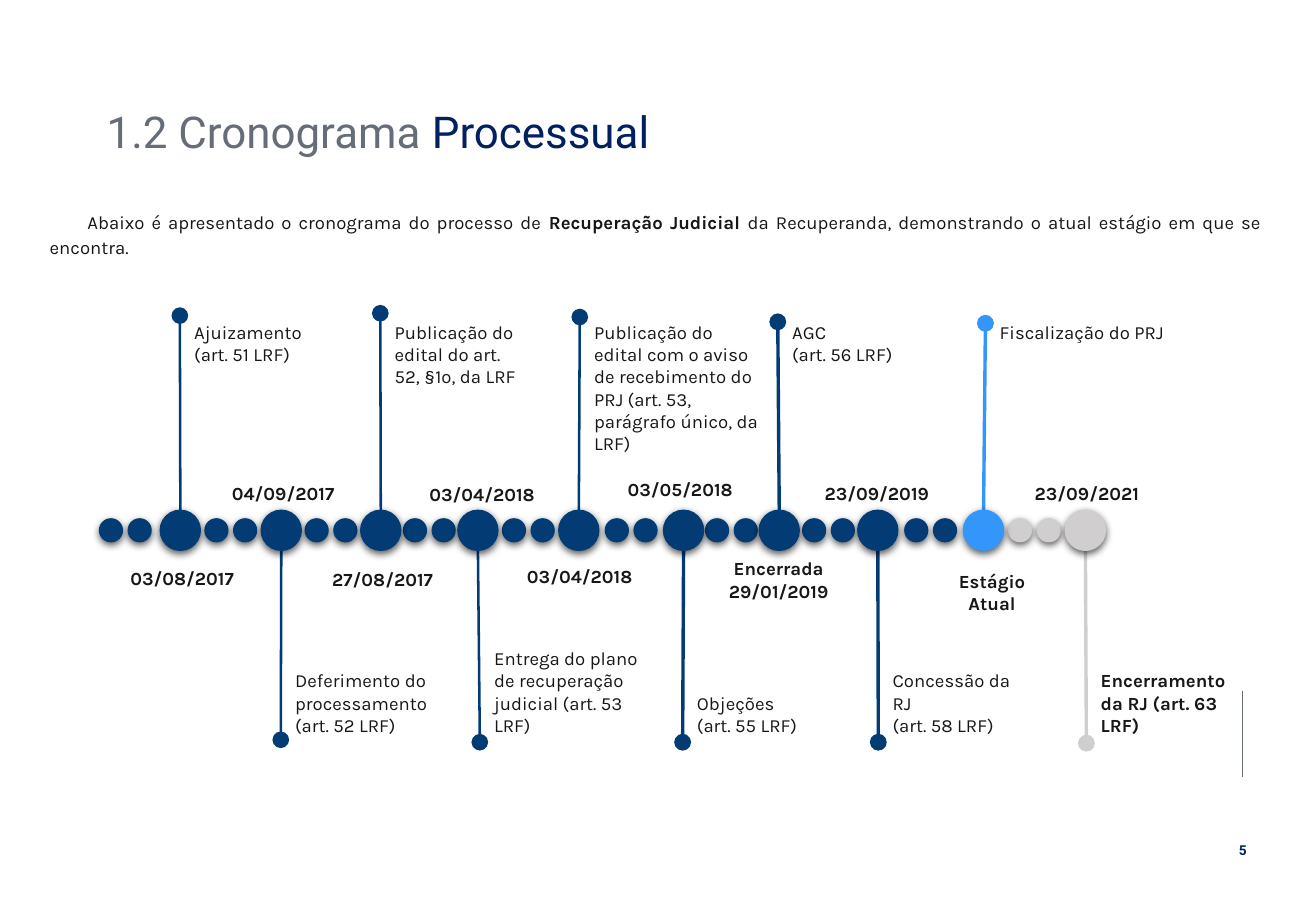
from dataclasses import dataclass

from lxml import etree
from pptx import Presentation
from pptx.dml.color import RGBColor
from pptx.enum.shapes import MSO_CONNECTOR, MSO_SHAPE
from pptx.enum.text import MSO_ANCHOR, MSO_AUTO_SIZE, PP_ALIGN
from pptx.oxml.ns import qn
from pptx.util import Cm, Pt

STRAIGHT = MSO_CONNECTOR.STRAIGHT
OVAL = MSO_SHAPE.OVAL
TOP, BOTTOM = MSO_ANCHOR.TOP, MSO_ANCHOR.BOTTOM
FIT_SHAPE = MSO_AUTO_SIZE.SHAPE_TO_FIT_TEXT
LEFT, CENTER, JUSTIFY = PP_ALIGN.LEFT, PP_ALIGN.CENTER, PP_ALIGN.JUSTIFY

NAVY, GRAY, INK = "002060", "656D78", "181717"
DONE, CURRENT, FUTURE = "033C75", "3296FA", "D0CECE"

AXIS_Y = 4.59
CAPTION_TOP, CAPTION_BOTTOM, CAPTION_HEIGHT = 0.08, 9.02, 1.2
DATE_WIDTH, DATE_HEIGHT = 2.9, 0.74
MILESTONE_SIZE, STEP_SIZE = 0.84, 0.48
STEM_START = 0.35
STEP_OFFSET = 0.3
LEADING_STEPS_X = 0.62


@dataclass
class Milestone:
    """Positions are in cm from the corner of the timeline."""
    x: float
    tip_x: float
    tip_y: float
    stem_width: float
    date: str
    date_x: float
    date_top: float
    caption: str
    caption_width: float
    color: str = DONE


MILESTONES = [
    Milestone(1.77, 1.76, 0.1, 1.5, "03/08/2017", 1.81, 5.23,
              "Ajuizamento (art. 51 LRF)", 2.82),
    Milestone(3.88, 3.87, 8.97, 1.5, "04/09/2017", 3.92, 3.46,
              "Deferimento do processamento (art. 52 LRF)", 3.48),
    Milestone(5.96, 5.95, 0.05, 1.5, "27/08/2017", 6, 5.26,
              "Publicação do edital do art. 52, §1º, da LRF", 3.3),
    Milestone(7.99, 8.03, 9.02, 1.5, "03/04/2018", 8.08, 3.48,
              "Entrega do plano de recuperação judicial (art. 53 LRF)", 3.56),
    Milestone(10.1, 10.12, 0.13, 1.5, "03/04/2018", 10.12, 5.18,
              "Publicação do edital com o aviso de recebimento do PRJ "
              "(art. 53, parágrafo único, da LRF)", 3.96),
    Milestone(12.29, 12.27, 9.02, 2, "03/05/2018", 12.22, 3.36,
              "Objeções\n(art. 55 LRF)", 2.8),
    Milestone(14.29, 14.26, 0.23, 2, "Encerrada\n29/01/2019", 14.28, 5.03,
              "AGC\n(art. 56 LRF)", 2.8),
    Milestone(16.35, 16.36, 9.02, 2, "23/09/2019", 16.33, 3.46,
              "Concessão da RJ\n(art. 58 LRF)", 3.38),
    Milestone(18.56, 18.6, 0.26, 2, "Estágio Atual", 18.74, 5.29,
              "Fiscalização do PRJ", 4.01, CURRENT),
    Milestone(20.69, 20.71, 9.04, 2, "23/09/2021", 20.72, 3.46,
              "Encerramento da RJ (art. 63 LRF)", 3.48, FUTURE),
]


def rgb(color):
    return RGBColor.from_string(color)


def format_run(run, size, font, color, bold=False):
    run.font.size = Pt(size)
    run.font.name = font
    run.font.bold = bold
    run.font.color.rgb = rgb(color)


def add_text_box(slide, left, top, width, height, anchor=TOP):
    box = slide.shapes.add_textbox(Cm(left), Cm(top), Cm(width), Cm(height))
    box.text_frame.word_wrap = True
    box.text_frame.vertical_anchor = anchor
    return box.text_frame


def add_label(slide, left, top, width, height, text, size=11, font="Karla",
              color=INK, bold=False, align=LEFT, anchor=TOP):
    frame = add_text_box(slide, left, top, width, height, anchor)
    frame.auto_size = FIT_SHAPE
    frame.text = text
    for paragraph in frame.paragraphs:
        paragraph.alignment = align
        for run in paragraph.runs:
            format_run(run, size, font, color, bold)


def add_line(slide, x1, y1, x2, y2, color, width):
    line = slide.shapes.add_connector(STRAIGHT, Cm(x1), Cm(y1), Cm(x2), Cm(y2))
    line.line.color.rgb = rgb(color)
    line.line.width = Pt(width)
    etree.SubElement(line._element.spPr, qn("a:effectLst"))
    return line


def add_dot(slide, x, y, size, color):
    """Draw a dot with a soft shadow, centred on x, y."""
    dot = slide.shapes.add_shape(OVAL, Cm(x - size / 2), Cm(y - size / 2),
                                 Cm(size), Cm(size))
    dot.fill.solid()
    dot.fill.fore_color.rgb = rgb(color)
    dot.line.color.rgb = rgb(color)
    dot.line.width = Pt(0.75)
    dot.shadow.inherit = False
    effects = dot._element.spPr.find(qn("a:effectLst"))
    shadow = etree.SubElement(effects, qn("a:outerShdw"), blurRad=str(Pt(4.5)),
                              dist=str(Pt(1.5)), dir="5400000", rotWithShape="0")
    shade = etree.SubElement(shadow, qn("a:srgbClr"), val="000000")
    etree.SubElement(shade, qn("a:alpha"), val="63000")


def add_title(slide, left, top, width, height):
    paragraph = add_text_box(slide, left, top, width, height).paragraphs[0]
    paragraph.line_spacing = 0.9
    for text, color in (("1.2 Cronograma ", GRAY), ("Processual", NAVY)):
        run = paragraph.add_run()
        run.text = text
        format_run(run, 26, "Roboto", color)


def add_introduction(slide, left, top, width, height):
    paragraph = add_text_box(slide, left, top, width, height).paragraphs[0]
    paragraph.alignment = JUSTIFY
    paragraph.line_spacing = 1.14
    paragraph._p.get_or_add_pPr().set("indent", str(Cm(0.79)))
    for text, bold in (
            ("Abaixo é apresentado o cronograma do processo de ", False),
            ("Recuperação Judicial ", True),
            ("da Recuperanda, demonstrando o atual estágio em que se encontra.", False)):
        run = paragraph.add_run()
        run.text = text
        format_run(run, 11, "Karla", INK, bold)


def add_stem(slide, left, top, milestone):
    direction = -1 if milestone.tip_y < AXIS_Y else 1
    stem = add_line(slide, left + milestone.x,
                    top + AXIS_Y + direction * STEM_START,
                    left + milestone.tip_x, top + milestone.tip_y,
                    milestone.color, milestone.stem_width)
    etree.SubElement(stem.line._get_or_add_ln(), qn("a:tailEnd"),
                     type="oval", w="lg", len="lg")


def add_milestone_labels(slide, left, top, milestone):
    above = milestone.tip_y < AXIS_Y
    caption_top = CAPTION_TOP if above else CAPTION_BOTTOM - CAPTION_HEIGHT
    add_label(slide, left + milestone.tip_x + 0.05, top + caption_top,
              milestone.caption_width, CAPTION_HEIGHT, milestone.caption,
              bold=milestone.color == FUTURE, anchor=TOP if above else BOTTOM)
    add_label(slide, left + milestone.date_x - DATE_WIDTH / 2,
              top + milestone.date_top, DATE_WIDTH, DATE_HEIGHT,
              milestone.date, bold=True, align=CENTER)


def add_timeline(slide, left, top):
    for milestone in MILESTONES:
        add_stem(slide, left, top, milestone)

    step_pairs = [(LEADING_STEPS_X, DONE)]
    for before, after in zip(MILESTONES, MILESTONES[1:]):
        color = FUTURE if after.color == FUTURE else DONE
        step_pairs.append(((before.x + after.x) / 2, color))
    for middle, color in step_pairs:
        for offset in (-STEP_OFFSET, STEP_OFFSET):
            add_dot(slide, left + middle + offset, top + AXIS_Y, STEP_SIZE, color)

    for milestone in MILESTONES:
        add_dot(slide, left + milestone.x, top + AXIS_Y, MILESTONE_SIZE,
                milestone.color)
        add_milestone_labels(slide, left, top, milestone)


def add_page_mark(slide, left, top, width):
    """Draw the vertical rule and the page number below it."""
    middle = left + width / 2
    add_line(slide, middle, top, middle, top + 1.8, GRAY, 0.5)
    add_label(slide, left, top + 3.02, width, 0.61, "5", 8.1, "Roboto", NAVY,
              bold=True, align=CENTER)


def main():
    presentation = Presentation()
    presentation.slide_width = Cm(27.51)
    presentation.slide_height = Cm(19.05)
    slide = presentation.slides.add_slide(presentation.slide_layouts[6])
    add_page_mark(slide, 25.55, 14.45, 0.86)
    add_title(slide, 1.98, 2.18, 20.78, 1.35)
    add_introduction(slide, 0.79, 4.22, 25.83, 1.3)
    add_timeline(slide, 2, 6.5)
    presentation.save("out.pptx")


if __name__ == "__main__":
    main()
